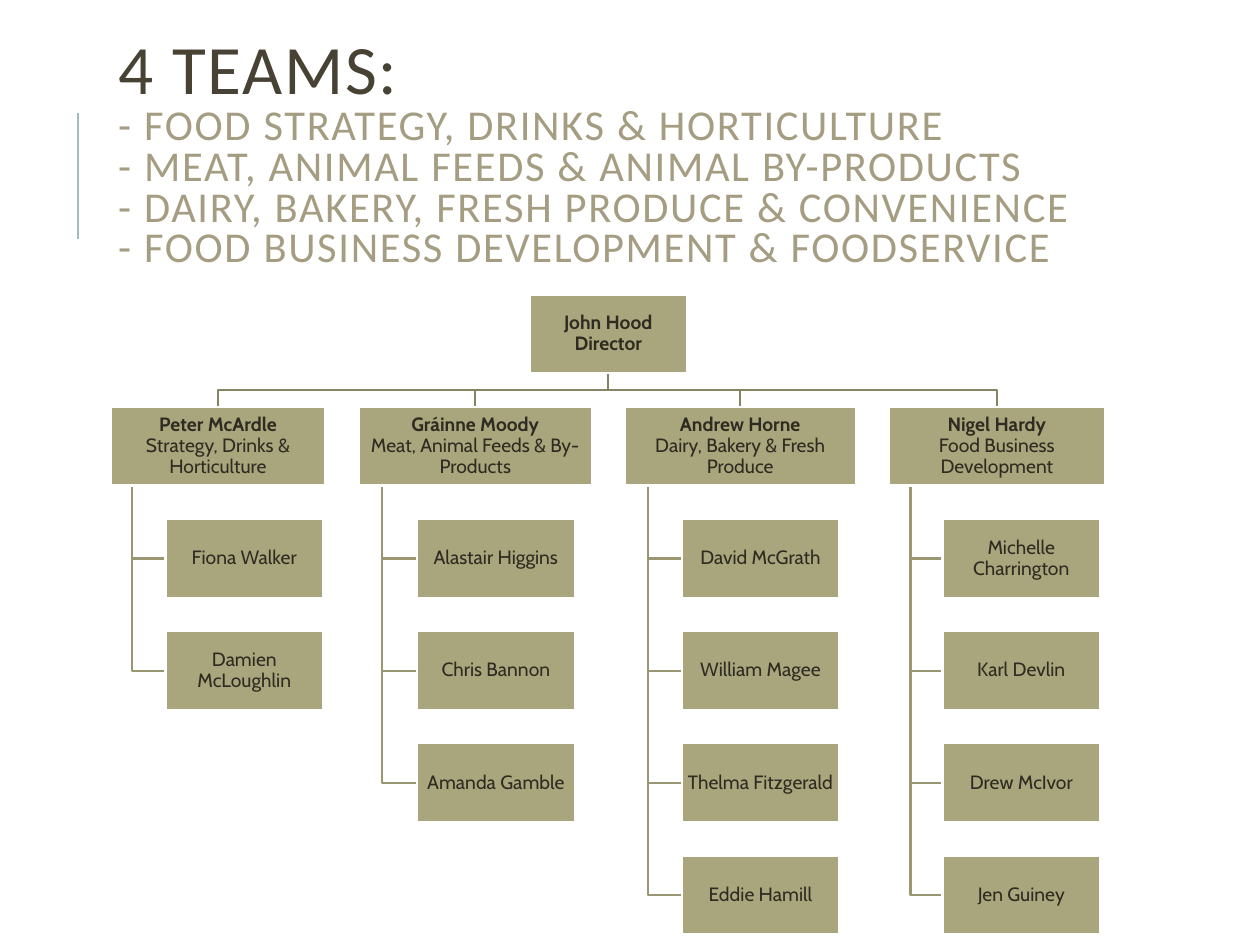
import pptx
import pptx.dml.color
import pptx.enum.shapes
import pptx.enum.text
import pptx.oxml
import pptx.oxml.ns
import pptx.util

Pt = pptx.util.Pt

COLOURS = {
    "accent": "9CBEBD",
    "heading": "474233",
    "subheading": "A59D82",
    "box": "A9A57C",
    "box_text": "2E2B21",
    "border": "FFFFFF",
    "team_line": "878463",
    "member_line": "999671",
}

TEAM_NAMES = [
    "- FOOD STRATEGY, DRINKS & HORTICULTURE",
    "- MEAT, ANIMAL FEEDS & ANIMAL BY-PRODUCTS",
    "- DAIRY, BAKERY, FRESH PRODUCE & CONVENIENCE",
    "- FOOD BUSINESS DEVELOPMENT & FOODSERVICE",
]

# Leader, team, left and width of the leader's box, left of the members, members
TEAMS = [
    ("Peter McArdle", "Strategy, Drinks & Horticulture", 63.4, 122.4, 94.6,
     ["Fiona Walker", "Damien McLoughlin"]),
    ("Gráinne Moody", "Meat, Animal Feeds & By-Products", 205, 133.2, 238.4,
     ["Alastair Higgins", "Chris Bannon", "Amanda Gamble"]),
    ("Andrew Horne", "Dairy, Bakery & Fresh Produce", 357, 132, 389.6,
     ["David McGrath", "William Magee", "Thelma Fitzgerald", "Eddie Hamill"]),
    ("Nigel Hardy", "Food Business Development", 507.9, 123.5, 538.6,
     ["Michelle Charrington", "Karl Devlin", "Drew McIvor", "Jen Guiney"]),
]

BOX_WIDTH, BOX_HEIGHT = 90, 45
CHART_TOP, ROW_PITCH = 168.4, 64.1
DIRECTOR_LEFT = 302.6


class SlideBuilder:
    """Holds the chart style and the slide being built."""

    def __init__(self, slide):
        self.slide = slide
        self.box_font = "Cabin"
        self.title_font = "Calibri"
        self.line_width = 1.25

    def colour(self, name):
        return pptx.dml.color.RGBColor.from_string(COLOURS[name])

    def write_lines(self, paragraph, lines):
        """Write lines into one paragraph and return their runs."""
        runs = []
        for line in lines:
            if runs:
                paragraph.add_line_break()
            run = paragraph.add_run()
            run.text = line
            runs.append(run)
        return runs

    def style_paragraph(self, paragraph, font_name, size, colour, spacing):
        paragraph.line_spacing = spacing
        paragraph.font.name = font_name
        paragraph.font.size = Pt(size)
        paragraph.font.color.rgb = self.colour(colour)

    def title(self, left, top, width, height, heading, lines):
        shape = self.slide.shapes.add_textbox(Pt(left), Pt(top), Pt(width), Pt(height))
        frame = shape.text_frame
        frame.word_wrap = True
        frame.vertical_anchor = pptx.enum.text.MSO_ANCHOR.MIDDLE
        paragraph = frame.paragraphs[0]
        self.style_paragraph(paragraph, self.title_font, 24.3, "subheading", 0.8)
        runs = self.write_lines(paragraph, [heading] + lines)
        runs[0].font.size = Pt(39.6)
        runs[0].font.color.rgb = self.colour("heading")
        for run in runs:
            run.font._element.set("spc", "100")

    def straight_line(self, x1, y1, x2, y2, colour, width):
        line = self.slide.shapes.add_connector(
            pptx.enum.shapes.MSO_CONNECTOR.STRAIGHT, Pt(x1), Pt(y1), Pt(x2), Pt(y2))
        line.line.color.rgb = self.colour(colour)
        line.line.width = Pt(width)
        properties = line._element.spPr
        properties.append(pptx.oxml.parse_xml(
            "<a:effectLst %s/>" % pptx.oxml.ns.nsdecls("a")))

    def bent_line(self, points, colour):
        corners = [(Pt(x), Pt(y)) for x, y in points]
        builder = self.slide.shapes.build_freeform(*corners[0])
        builder.add_line_segments(corners[1:], close=False)
        shape = builder.convert_to_shape()
        shape.shadow.inherit = False
        shape.fill.background()
        shape.line.color.rgb = self.colour(colour)
        shape.line.width = Pt(self.line_width)

    def box(self, left, top, width, lines, bold_lines=0):
        shape = self.slide.shapes.add_shape(
            pptx.enum.shapes.MSO_SHAPE.RECTANGLE,
            Pt(left), Pt(top), Pt(width), Pt(BOX_HEIGHT))
        shape.shadow.inherit = False
        shape.fill.solid()
        shape.fill.fore_color.rgb = self.colour("box")
        shape.line.color.rgb = self.colour("border")
        shape.line.width = Pt(self.line_width)
        frame = shape.text_frame
        frame.word_wrap = True
        frame.vertical_anchor = pptx.enum.text.MSO_ANCHOR.MIDDLE
        frame.margin_left = frame.margin_right = Pt(0.7)
        frame.margin_top = frame.margin_bottom = Pt(0.7)
        paragraph = frame.paragraphs[0]
        paragraph.alignment = pptx.enum.text.PP_ALIGN.CENTER
        self.style_paragraph(paragraph, self.box_font, 11, "box_text", 0.9)
        for run in self.write_lines(paragraph, lines)[:bold_lines]:
            run.font.bold = True


def row_top(row):
    return CHART_TOP + row * ROW_PITCH


def main():
    presentation = pptx.Presentation()
    presentation.slide_width, presentation.slide_height = Pt(720), Pt(540)
    slide = presentation.slides.add_slide(presentation.slide_layouts[6])
    builder = SlideBuilder(slide)

    # Title with its accent line
    builder.straight_line(44.6, 136.8, 44.6, 64.8, "accent", 1.5)
    builder.title(60.5, 30.2, 573.8, 118.1, "4 TEAMS:", TEAM_NAMES)

    # Lines from the director to the leaders, and from each leader to the members
    director_centre = DIRECTOR_LEFT + BOX_WIDTH / 2
    director_bottom = row_top(0) + BOX_HEIGHT
    branch_y = (director_bottom + row_top(1)) / 2
    for _, _, left, width, member_left, members in TEAMS:
        centre = left + width / 2
        builder.bent_line([(director_centre, director_bottom), (director_centre, branch_y),
                           (centre, branch_y), (centre, row_top(1))], "team_line")
        trunk_x = left + width / 10
        for row in range(2, 2 + len(members)):
            middle = row_top(row) + BOX_HEIGHT / 2
            builder.bent_line([(trunk_x, row_top(1) + BOX_HEIGHT), (trunk_x, middle),
                               (member_left, middle)], "member_line")

    # Boxes for the director, leaders and members
    builder.box(DIRECTOR_LEFT, row_top(0), BOX_WIDTH, ["John Hood", "Director"], 2)
    for leader, team, left, width, member_left, members in TEAMS:
        builder.box(left, row_top(1), width, [leader, team], 1)
        for row, member in enumerate(members, 2):
            builder.box(member_left, row_top(row), BOX_WIDTH, [member])

    presentation.save("out.pptx")


if __name__ == "__main__":
    main()
